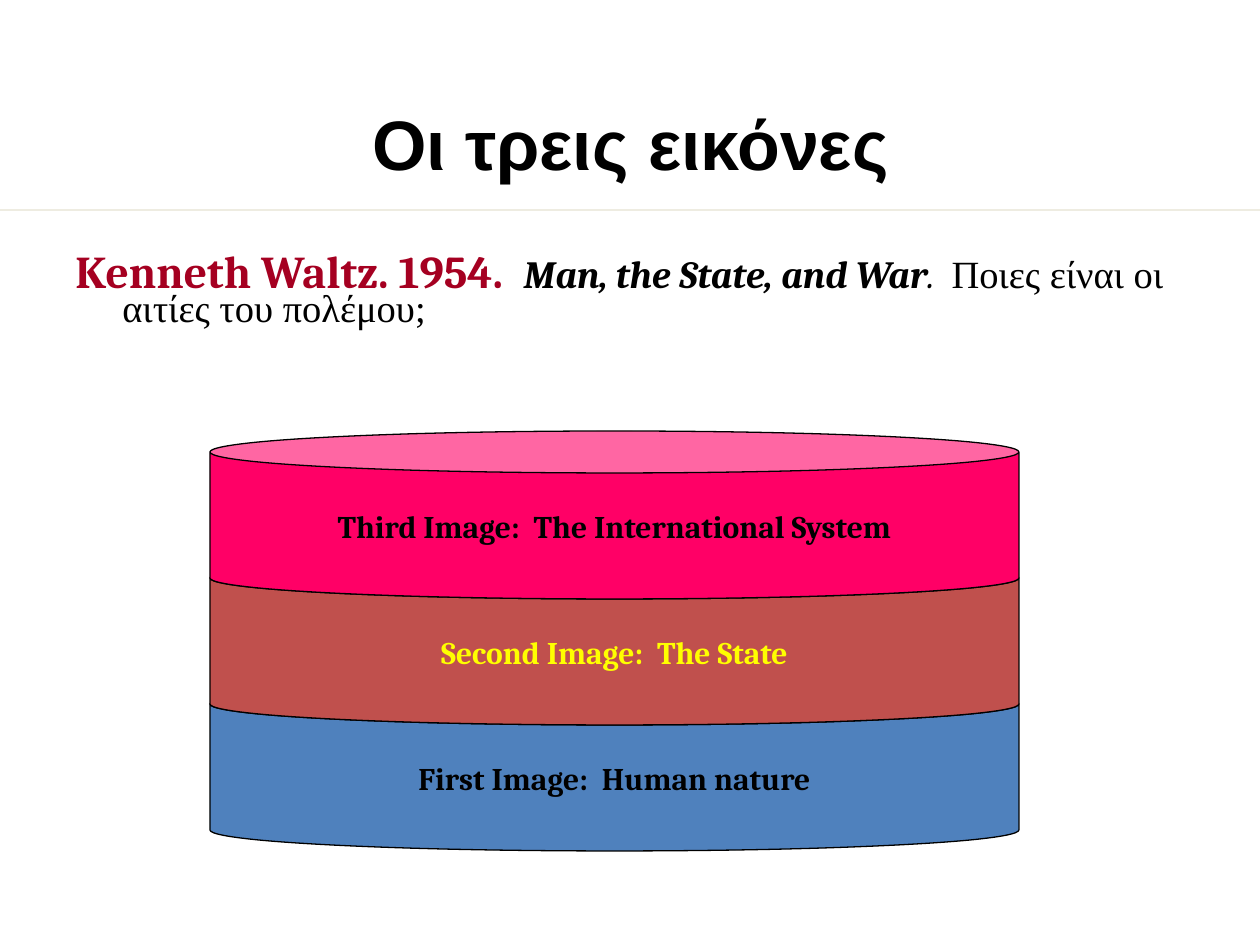
from pptx import Presentation
from pptx.dml.color import RGBColor
from pptx.enum.shapes import MSO_CONNECTOR, MSO_SHAPE
from pptx.enum.text import MSO_ANCHOR, PP_ALIGN
from pptx.oxml.ns import qn
from pptx.util import Emu, Pt
from lxml.etree import SubElement

EMU_PER_PX = 914400 / 126


def px(length):
    return Emu(round(length * EMU_PER_PX))


def color(hex_string):
    return RGBColor.from_string(hex_string)


def add_text(paragraph, text, size=18, font="Cambria", fill="000000", bold=False, italic=False):
    run = paragraph.add_run()
    run.text = text
    run.font.size = Pt(size)
    run.font.name = font
    run.font.color.rgb = color(fill)
    run.font.bold = bold
    run.font.italic = italic


class SlideBuilder:
    """Holds the slide and its shared style, and adds each kind of element."""

    outline = "000000"
    outline_width = 0.75

    def __init__(self, slide):
        self.slide = slide

    def text_box(self, left, top, width, height, anchor=MSO_ANCHOR.TOP):
        shape = self.slide.shapes.add_textbox(px(left), px(top), px(width), px(height))
        shape.text_frame.word_wrap = True
        shape.text_frame.vertical_anchor = anchor
        return shape.text_frame.paragraphs[0]

    def rule(self, left, top, right, fill, width):
        connector = self.slide.shapes.add_connector(
            MSO_CONNECTOR.STRAIGHT, px(left), px(top), px(right), px(top))
        connector.line.color.rgb = color(fill)
        connector.line.width = Pt(width)
        SubElement(connector._element.spPr, qn("a:effectLst"))

    def can(self, left, top, width, height, fill, label, label_fill):
        shape = self.slide.shapes.add_shape(
            MSO_SHAPE.CAN, px(left), px(top), px(width), px(height))
        shape.adjustments[0] = 0.25
        shape.shadow.inherit = False
        shape.fill.solid()
        shape.fill.fore_color.rgb = color(fill)
        shape.line.color.rgb = color(self.outline)
        shape.line.width = Pt(self.outline_width)
        shape.text_frame.word_wrap = False
        shape.text_frame.vertical_anchor = MSO_ANCHOR.MIDDLE
        paragraph = shape.text_frame.paragraphs[0]
        paragraph.alignment = PP_ALIGN.CENTER
        add_text(paragraph, label, fill=label_fill, bold=True)


def main():
    presentation = Presentation()
    presentation.slide_width, presentation.slide_height = px(1260), px(945)
    slide = presentation.slides.add_slide(presentation.slide_layouts[6])
    builder = SlideBuilder(slide)

    title = builder.text_box(95, 63, 1071, 158, MSO_ANCHOR.MIDDLE)
    title.alignment = PP_ALIGN.CENTER
    add_text(title, "Οι τρεις εικόνες", size=40, font="Arial", bold=True)

    body = builder.text_box(63, 252, 1134, 95)
    body.line_spacing = 0.7
    body.space_before = Pt(5)
    properties = body._p.get_or_add_pPr()
    properties.set("marL", str(px(47)))
    properties.set("indent", str(px(-47)))
    add_text(body, "Kenneth Waltz. 1954.  ", size=26, fill="A50021", bold=True)
    add_text(body, "Man, the State, and War", size=22, bold=True, italic=True)
    add_text(body, ".  ", size=22, italic=True)
    add_text(body, "Ποιες είναι οι αιτίες του πολέμου;", size=22, font="Times New Roman")

    builder.rule(0, 210, 1260, "EEECE1", 1)

    images = [
        ("4F81BD", "First Image:  Human nature", "000000"),
        ("C0504D", "Second Image:  The State", "FFFF00"),
        ("FF0066", "Third Image:  The International System", "000000"),
    ]
    for level, (fill, label, label_fill) in enumerate(images):
        builder.can(210, 683 - 126 * level, 809, 168, fill, label, label_fill)

    presentation.save("out.pptx")


if __name__ == "__main__":
    main()
